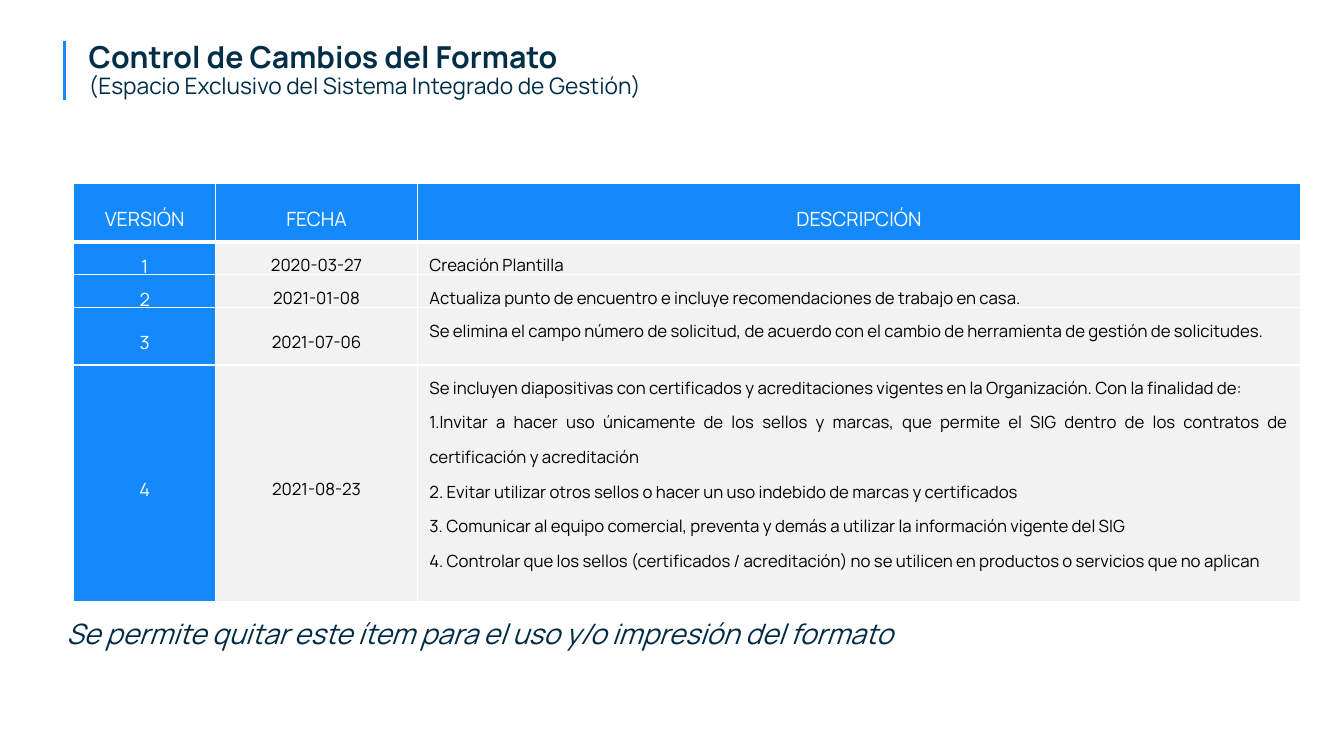
from dataclasses import dataclass

from lxml import etree
from pptx import Presentation, util as u
from pptx.dml.color import RGBColor
from pptx.enum import shapes, text
from pptx.oxml import ns

SLIDE_WIDTH, SLIDE_HEIGHT = u.Inches(13.33), u.Inches(7.5)


@dataclass(frozen=True)
class Theme:
    font: str = "Manrope"
    accent: str = "1389FB"
    heading: str = "002F47"
    note: str = "002B45"
    panel: str = "F2F2F2"
    white: str = "FFFFFF"
    black: str = "000000"
    title_size: float = 21.6
    subtitle_size: float = 16.2
    note_size: float = 20
    header_size: float = 14
    version_size: float = 13
    body_size: float = 12


THEME = Theme()
COLUMN_SHARES = (10.58, 15, 65.72)
ROW_SHARES = (7.73, 4, 4, 7.6, 31.33)
HEADERS = ("VERSIÓN", "FECHA", "DESCRIPCIÓN")
CHANGES = (
    ("2020-03-27", ["Creación Plantilla"]),
    ("2021-01-08", ["Actualiza punto de encuentro e incluye recomendaciones de trabajo en casa."]),
    ("2021-07-06", ["Se elimina el campo número de solicitud, de acuerdo con el cambio de "
                    "herramienta de gestión de solicitudes."]),
    ("2021-08-23", [
        "Se incluyen diapositivas con certificados y acreditaciones vigentes en la Organización. "
        "Con la finalidad de:",
        "1.Invitar a hacer uso únicamente de los sellos y marcas, que permite el SIG dentro de "
        "los contratos de certificación y acreditación",
        "2. Evitar utilizar otros sellos o hacer un uso indebido de marcas y certificados",
        "3. Comunicar al equipo comercial, preventa y demás a utilizar la información vigente del SIG",
        "4. Controlar que los sellos (certificados / acreditación) no se utilicen en productos "
        "o servicios que no aplican",
    ]),
)


def across(percent):
    return round(SLIDE_WIDTH * percent / 100)


def down(percent):
    return round(SLIDE_HEIGHT * percent / 100)


def area(left, top, width, height):
    """Turn percentages of the slide into a position and a size."""
    return across(left), down(top), across(width), down(height)


def add_run(paragraph, words, size, color, bold=False, italic=False):
    run = paragraph.add_run()
    run.text = words
    font = run.font
    font.name, font.size = THEME.font, u.Pt(size)
    font.bold, font.italic = bold, italic
    font.color.rgb = RGBColor.from_string(color)


def add_title(slide, title, subtitle):
    shape = slide.shapes.title
    shape.left, shape.top, shape.width, shape.height = area(6.6, 6.93, 80, 4.93)
    frame = shape.text_frame
    frame.auto_size = text.MSO_AUTO_SIZE.NONE
    frame.word_wrap = True
    frame.vertical_anchor = text.MSO_ANCHOR.MIDDLE
    frame.margin_left = frame.margin_right = frame.margin_top = frame.margin_bottom = 0
    paragraph = frame.paragraphs[0]
    paragraph.alignment = text.PP_ALIGN.LEFT
    paragraph.line_spacing = 0.9
    add_run(paragraph, title, THEME.title_size, THEME.heading, bold=True)
    paragraph.add_line_break()
    add_run(paragraph, subtitle, THEME.subtitle_size, THEME.heading)


def add_title_rule(slide):
    rule = slide.shapes.add_connector(shapes.MSO_CONNECTOR.STRAIGHT,
                                      across(4.8), down(5.47), across(4.8), down(13.2))
    rule.line.color.rgb = RGBColor.from_string(THEME.accent)
    rule.line.width = u.Pt(2.25)
    etree.SubElement(rule._element.spPr, ns.qn("a:effectLst"))


def add_note(slide, words):
    frame = slide.shapes.add_textbox(*area(4.2, 80.93, 72.47, 5.87)).text_frame
    frame.word_wrap = True
    frame.auto_size = text.MSO_AUTO_SIZE.SHAPE_TO_FIT_TEXT
    add_run(frame.paragraphs[0], words, THEME.note_size, THEME.note, italic=True)


def set_borders(cell, bottom=1):
    properties = cell._tc.get_or_add_tcPr()
    for side, width in (("L", 1), ("R", 1), ("T", 1), ("B", bottom)):
        line = etree.SubElement(properties, ns.qn(f"a:ln{side}"), w=str(u.Pt(width)))
        fill = etree.SubElement(line, ns.qn("a:solidFill"))
        etree.SubElement(fill, ns.qn("a:srgbClr"), val=THEME.white)


def fill_cell(cell, lines, size, color, background, justified=False, bottom=1):
    set_borders(cell, bottom)
    cell.fill.solid()
    cell.fill.fore_color.rgb = RGBColor.from_string(background)
    cell.margin_left = cell.margin_right = u.Inches(0.12)
    cell.margin_top = cell.margin_bottom = 0
    cell.vertical_anchor = text.MSO_ANCHOR.TOP if justified else text.MSO_ANCHOR.MIDDLE
    frame = cell.text_frame
    for index, words in enumerate(lines):
        paragraph = frame.add_paragraph() if index else frame.paragraphs[0]
        paragraph.alignment = text.PP_ALIGN.JUSTIFY if justified else text.PP_ALIGN.CENTER
        paragraph.line_spacing = 1.5
        add_run(paragraph, words, size, color)


def add_change_table(slide):
    place = area(5.48, 24.27, sum(COLUMN_SHARES), sum(ROW_SHARES))
    table = slide.shapes.add_table(len(ROW_SHARES), len(COLUMN_SHARES), *place).table
    table.first_row = table.horz_banding = False
    for column, share in zip(table.columns, COLUMN_SHARES):
        column.width = across(share)
    for row, share in zip(table.rows, ROW_SHARES):
        row.height = down(share)

    for index, header in enumerate(HEADERS):
        fill_cell(table.cell(0, index), [header], THEME.header_size, THEME.white,
                  THEME.accent, bottom=3)
    for version, (date, description) in enumerate(CHANGES, start=1):
        fill_cell(table.cell(version, 0), [str(version)], THEME.version_size,
                  THEME.white, THEME.accent)
        fill_cell(table.cell(version, 1), [date], THEME.body_size, THEME.black, THEME.panel)
        fill_cell(table.cell(version, 2), description, THEME.body_size, THEME.black,
                  THEME.panel, justified=True)


def main():
    presentation = Presentation()
    presentation.slide_width, presentation.slide_height = SLIDE_WIDTH, SLIDE_HEIGHT
    title_only = presentation.slide_layouts[5]
    slide = presentation.slides.add_slide(title_only)
    add_title_rule(slide)
    add_title(slide, "Control de Cambios del Formato",
              "(Espacio Exclusivo del Sistema Integrado de Gestión)")
    add_note(slide, "Se permite quitar este ítem para el uso y/o impresión del formato")
    add_change_table(slide)
    presentation.save("out.pptx")


if __name__ == "__main__":
    main()
